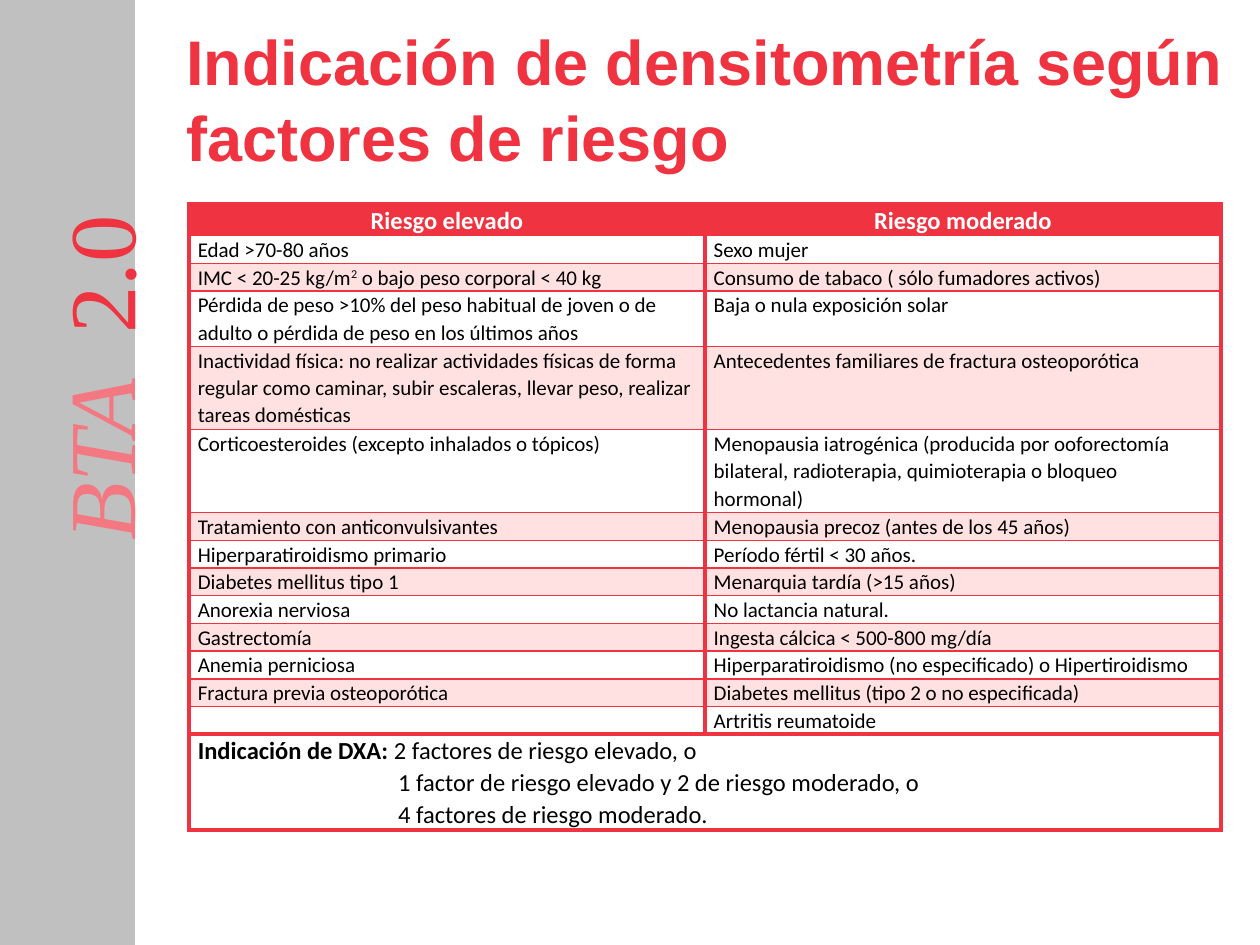
from pptx import Presentation
from pptx.dml.color import RGBColor
from pptx.enum.shapes import MSO_SHAPE
from pptx.enum.text import MSO_ANCHOR, MSO_AUTO_SIZE, PP_ALIGN
from pptx.oxml.ns import qn
from pptx.util import Inches, Pt
from lxml import etree

RED = RGBColor(0xEF, 0x33, 0x40)
SOFT_RED = RGBColor(0xF4, 0x78, 0x81)
PINK = RGBColor(0xFF, 0xE1, 0xE1)
GRAY = RGBColor(0xC0, 0xC0, 0xC0)
WHITE = RGBColor(0xFF, 0xFF, 0xFF)
BLACK = RGBColor(0, 0, 0)
TOP, MIDDLE = MSO_ANCHOR.TOP, MSO_ANCHOR.MIDDLE
LEFT, CENTER = PP_ALIGN.LEFT, PP_ALIGN.CENTER
NO_RESIZE = MSO_AUTO_SIZE.NONE

TITLE = "Indicación de densitometría según factores de riesgo"
HEADERS = ("Riesgo elevado", "Riesgo moderado")
FACTORS = [
    ("Edad >70-80 años", "Sexo mujer", 1),
    (("IMC < 20-25 kg/m", "2", " o bajo peso corporal < 40 kg"),
     "Consumo de tabaco ( sólo fumadores activos)", 1),
    ("Pérdida de peso >10% del peso habitual de joven o de adulto o pérdida de peso en los últimos años",
     "Baja o nula exposición solar", 2),
    ("Inactividad física: no realizar actividades físicas de forma regular como caminar, "
     "subir escaleras, llevar peso, realizar tareas domésticas",
     "Antecedentes familiares de fractura osteoporótica", 3),
    ("Corticoesteroides (excepto inhalados o tópicos)",
     "Menopausia iatrogénica (producida por ooforectomía bilateral, radioterapia, "
     "quimioterapia o bloqueo hormonal)", 3),
    ("Tratamiento con anticonvulsivantes", "Menopausia precoz (antes de los 45 años)", 1),
    ("Hiperparatiroidismo primario", "Período fértil < 30 años.", 1),
    ("Diabetes mellitus tipo 1", "Menarquia tardía (>15 años)", 1),
    ("Anorexia nerviosa", "No lactancia natural.", 1),
    ("Gastrectomía", "Ingesta cálcica < 500-800 mg/día", 1),
    ("Anemia perniciosa", "Hiperparatiroidismo (no especificado) o Hipertiroidismo", 1),
    ("Fractura previa osteoporótica", "Diabetes mellitus (tipo 2 o no especificada)", 1),
    ("", "Artritis reumatoide", 1),
]
DXA_LABEL = "Indicación de DXA:"
DXA_RULES = [
    " 2 factores de riesgo elevado, o",
    "1 factor de riesgo elevado y 2 de riesgo moderado, o",
    "4 factores de riesgo moderado.",
]

HEADER_FONT = {"name": "Calibri", "size": Pt(14), "bold": True, "color": WHITE}
FACTOR_FONT = {"name": "Calibri", "size": Pt(12), "bold": False, "color": BLACK}
RULE_FONT = {**FACTOR_FONT, "size": Pt(14)}
TITLE_FONT = {"name": "Arial", "size": Pt(36), "bold": True, "color": RED}
SERIES_FONT = {"name": "Times New Roman", "size": Pt(54), "italic": True, "color": SOFT_RED}
NUMBER_FONT = {**SERIES_FONT, "italic": False, "color": RED}

HEADER_HEIGHT, LINE_HEIGHT, RULES_HEIGHT = 0.25, 0.22, 0.76
RULE_INDENT = 1.59
THICK, THIN = 2.25, 1


def set_all(target, values):
    for name, value in values.items():
        setattr(target, name, value)


def add_span(para, text, look):
    span = para.add_run()
    span.text = text
    for name, value in look.items():
        if name == "color":
            span.font.color.rgb = value
        else:
            setattr(span.font, name, value)
    return span


def add_border(cell, top, bottom):
    properties = cell._tc.get_or_add_tcPr()
    for side, width in (("L", THICK), ("R", THICK), ("T", top), ("B", bottom)):
        line = etree.SubElement(properties, qn(f"a:ln{side}"), w=str(Pt(width)))
        fill = etree.SubElement(line, qn("a:solidFill"))
        etree.SubElement(fill, qn("a:srgbClr"), val=str(RED))


def format_cell(cell, fill, anchor=TOP, top=THIN, bottom=THIN):
    set_all(cell, {"margin_left": Inches(0.07), "margin_right": Inches(0.07),
                   "margin_top": 0, "margin_bottom": 0, "vertical_anchor": anchor})
    add_border(cell, top, bottom)
    if fill is None:
        cell.fill.background()
    else:
        cell.fill.solid()
        cell.fill.fore_color.rgb = fill


def fill_factor(cell, content):
    para = cell.text_frame.paragraphs[0]
    para.line_spacing = 1.07
    if not content:
        end = etree.SubElement(para._p, qn("a:endParaRPr"))
        end.set("sz", "1200")
        return
    parts = (content,) if isinstance(content, str) else content
    for index, part in enumerate(parts):
        span = add_span(para, part, FACTOR_FONT)
        if index == 1:
            span.font._element.set("baseline", "30000")


def add_sidebar(page):
    band = page.shapes.add_shape(MSO_SHAPE.RECTANGLE, 0, 0, Inches(1.07), Inches(7.5))
    band.shadow.inherit = False
    band.fill.solid()
    band.fill.fore_color.rgb = GRAY
    band.line.color.rgb = GRAY
    band.line.width = Pt(0.75)
    box = page.shapes.add_textbox(Inches(-0.77), Inches(2.12), Inches(3.23), Inches(1.3))
    box.rotation = 270
    set_all(box.text_frame, {"word_wrap": True, "vertical_anchor": TOP,
                             "margin_top": Inches(0.13)})
    para = box.text_frame.paragraphs[0]
    add_span(para, "BTA  ", SERIES_FONT)
    add_span(para, "2.0", NUMBER_FONT)


def add_title(page):
    title = page.shapes.title
    set_all(title, {"left": Inches(1.38), "top": Inches(0.13),
                    "width": Inches(8.43), "height": Inches(0.79)})
    set_all(title.text_frame, {"word_wrap": True, "auto_size": NO_RESIZE, "vertical_anchor": TOP})
    para = title.text_frame.paragraphs[0]
    para.alignment = LEFT
    add_span(para, TITLE, TITLE_FONT)


def add_factor_table(page):
    heights = [HEADER_HEIGHT, *(LINE_HEIGHT * lines for *_, lines in FACTORS), RULES_HEIGHT]
    frame = page.shapes.add_table(len(heights), 2, Inches(1.5), Inches(1.62),
                                  Inches(8.19), Inches(sum(heights)))
    table = frame.table
    set_all(table, {"first_row": False, "horz_banding": False})
    for row, height in zip(table.rows, heights):
        row.height = Inches(height)

    for column, header in enumerate(HEADERS):
        cell = table.cell(0, column)
        format_cell(cell, RED, anchor=MIDDLE, top=THICK)
        para = cell.text_frame.paragraphs[0]
        set_all(para, {"alignment": CENTER, "line_spacing": 1.07})
        add_span(para, header, HEADER_FONT)

    for row, (*contents, _) in enumerate(FACTORS, start=1):
        for column, content in enumerate(contents):
            cell = table.cell(row, column)
            format_cell(cell, None if row % 2 else PINK,
                        bottom=THICK if row == len(FACTORS) else THIN)
            fill_factor(cell, content)

    last = len(heights) - 1
    cell = table.cell(last, 0)
    cell.merge(table.cell(last, 1))
    for column in range(2):
        format_cell(table.cell(last, column), None, top=THICK, bottom=THICK)
    for index, rule in enumerate(DXA_RULES):
        para = cell.text_frame.add_paragraph() if index else cell.text_frame.paragraphs[0]
        para.line_spacing = 1.07
        if index:
            para._p.get_or_add_pPr().set("marL", str(Inches(RULE_INDENT)))
        else:
            add_span(para, DXA_LABEL, {**RULE_FONT, "bold": True})
        add_span(para, rule, RULE_FONT)


def main():
    deck = Presentation()
    set_all(deck, {"slide_width": Inches(10), "slide_height": Inches(7.5)})
    page = deck.slides.add_slide(deck.slide_layouts[5])
    add_sidebar(page)
    add_title(page)
    add_factor_table(page)
    deck.save("out.pptx")


if __name__ == "__main__":
    main()
